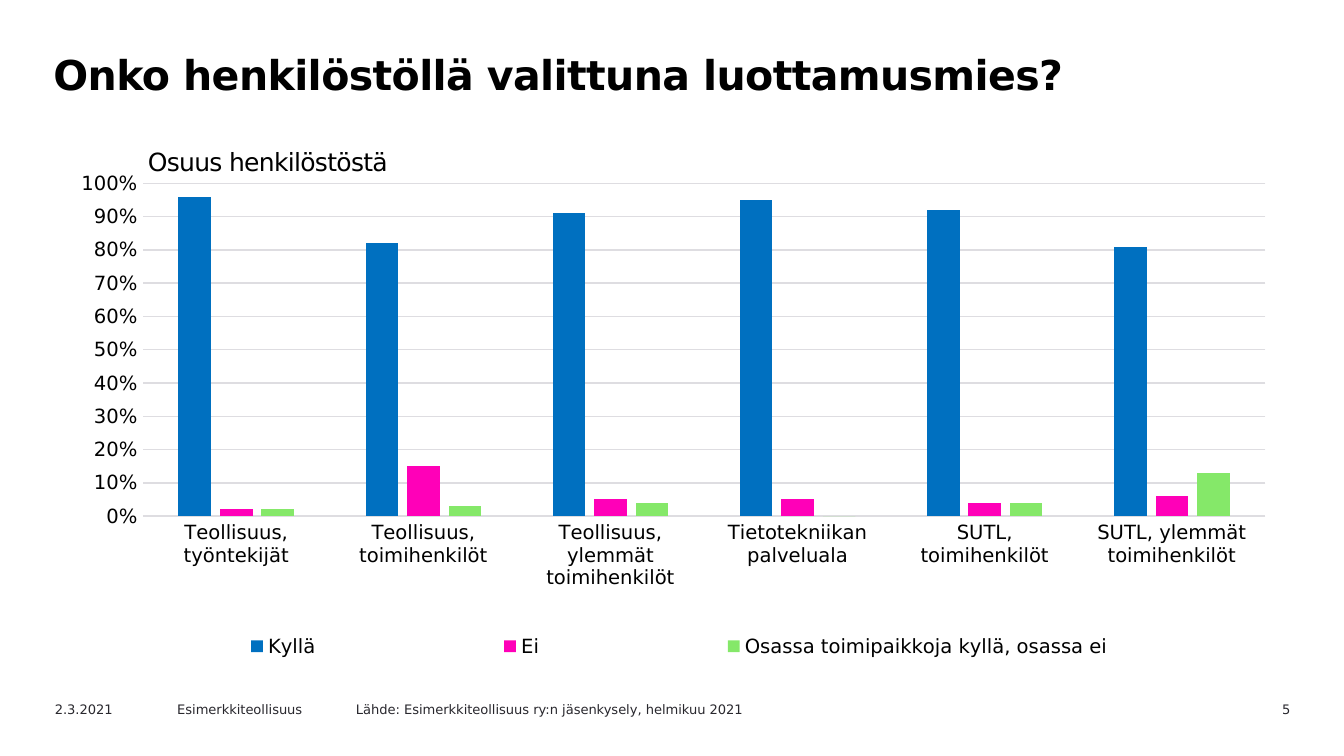
"""Build a slide with a clustered column chart on elected shop stewards."""
from lxml.etree import SubElement
from pptx import Presentation
from pptx.chart.data import CategoryChartData
from pptx.dml.color import RGBColor
from pptx.enum.chart import XL_CHART_TYPE, XL_LEGEND_POSITION, XL_TICK_MARK
from pptx.enum.text import PP_ALIGN
from pptx.oxml.ns import qn
from pptx.util import Inches, Pt

FONT = "DejaVu Sans"
COLORS = {"text": "000000", "footer": "29282E", "grid": "DEDDE1",
          "yes": "0070C0", "no": "FF00B8", "partly": "85E869"}


def add_text(text, left, top, width, height, size=7, color="footer", bold=False,
             align=PP_ALIGN.LEFT, inset=None, spacing=None, line=None, indent=0):
    sp = s.shapes.add_textbox(Inches(left), Inches(top), Inches(width), Inches(height))
    tf = sp.text_frame
    tf.word_wrap = True
    if inset is not None:
        tf.margin_left = tf.margin_right = Inches(inset)
        tf.margin_top = tf.margin_bottom = Inches(inset)
    p = tf.paragraphs[0]
    p.alignment = align
    if line:
        p.line_spacing = Pt(line)
    if indent:
        p._p.get_or_add_pPr().set("marL", str(Inches(indent)))
    r = p.add_run()
    r.text = text
    r.font.name, r.font.size, r.font.bold = FONT, Pt(size), bold
    r.font.color.rgb = RGBColor.from_string(COLORS[color])
    if spacing:
        r._r.get_or_add_rPr().set("spc", str(round(spacing * 100)))


def set_layout(element, x, y, w, h, inner=False):
    layout = element.find(qn("c:layout"))
    if layout is None:
        layout = SubElement(element, qn("c:layout"))
        anchor = element.find(qn("c:legendPos"))
        if anchor is not None:
            anchor.addnext(layout)
        else:
            element.insert(0, layout)
    manual = SubElement(layout, qn("c:manualLayout"))
    values = [("layoutTarget", "inner")] if inner else []
    values += [("xMode", "edge"), ("yMode", "edge"), ("x", x), ("y", y), ("w", w), ("h", h)]
    for tag, value in values:
        SubElement(manual, qn(f"c:{tag}")).set("val", str(value))


prs = Presentation()
prs.slide_width = Inches(10)
prs.slide_height = Inches(10) * 9 // 16
s = prs.slides.add_slide(prs.slide_layouts[6])

add_text("Onko henkilöstöllä valittuna luottamusmies?", 0.28, 0.31, 8.74, 0.71,
         size=22, color="text", bold=True, spacing=-0.3, line=27, indent=0.02)

data = CategoryChartData(number_format="0%")
data.categories = ["Teollisuus, työntekijät", "Teollisuus, toimihenkilöt",
                   "Teollisuus, ylemmät toimihenkilöt", "Tietotekniikan palveluala",
                   "SUTL, toimihenkilöt", "SUTL, ylemmät toimihenkilöt"]
series = [("Kyllä", "yes", (0.96, 0.82, 0.91, 0.95, 0.92, 0.81)),
          ("Ei", "no", (0.02, 0.15, 0.05, 0.05, 0.04, 0.06)),
          ("Osassa toimipaikkoja kyllä, osassa ei", "partly",
           (0.02, 0.03, 0.04, 0, 0.04, 0.13))]
for name, _, values in series:
    data.add_series(name, values)

chart = s.shapes.add_chart(XL_CHART_TYPE.COLUMN_CLUSTERED, Inches(0.42), Inches(1.21),
                           Inches(9.18), Inches(3.87), data).chart
chart.has_title = False
chart.font.name, chart.font.size = FONT, Pt(10)
chart.font.color.rgb = RGBColor.from_string(COLORS["footer"])
chart.has_legend = True
legend = chart.legend
legend.position = XL_LEGEND_POSITION.BOTTOM
legend.include_in_layout = False

plot = chart.plots[0]
plot.gap_width, plot.overlap, plot.vary_by_categories = 219, -27, False
for ser, (_, color, _) in zip(plot.series, series):
    ser.format.fill.solid()
    ser.format.fill.fore_color.rgb = RGBColor.from_string(COLORS[color])

cat_axis, val_axis = chart.category_axis, chart.value_axis
for part in (cat_axis.tick_labels, val_axis.tick_labels, legend):
    part.font.name, part.font.size = FONT, Pt(10.5)
    part.font.color.rgb = RGBColor.from_string(COLORS["text"])
for axis in (cat_axis, val_axis):
    axis.major_tick_mark = axis.minor_tick_mark = XL_TICK_MARK.NONE
val_axis.minimum_scale, val_axis.maximum_scale, val_axis.major_unit = 0, 1, 0.1
val_axis.tick_labels.number_format = "0%"
val_axis.tick_labels.number_format_is_linked = False
val_axis.format.line.fill.background()
val_axis.has_major_gridlines = True
for line in (cat_axis.format.line, val_axis.major_gridlines.format.line):
    line.width = Pt(0.75)
    line.color.rgb = RGBColor.from_string(COLORS["grid"])

plot_area = chart._chartSpace.chart.plotArea
set_layout(plot_area, 0.07, 0.04, 0.91, 0.64, inner=True)
set_layout(legend._element, 0.01, 0.88, 0.99, 0.1)

add_text("Osuus henkilöstöstä", 1.06, 1.05, 2.2, 0.31, size=13.4, color="text",
         inset=0.04, spacing=-0.4)

footers = [("2.3.2021", 0.31, 1, PP_ALIGN.LEFT),
           ("Esimerkkiteollisuus", 1.22, 1.42, PP_ALIGN.LEFT),
           ("Lähde: Esimerkkiteollisuus ry:n jäsenkysely, helmikuu 2021", 2.55, 3.25,
            PP_ALIGN.LEFT),
           ("5", 8.76, 0.94, PP_ALIGN.RIGHT)]
for text, left, width, align in footers:
    add_text(text, left, 5.17, width, 0.18, align=align)

prs.save("out.pptx")
